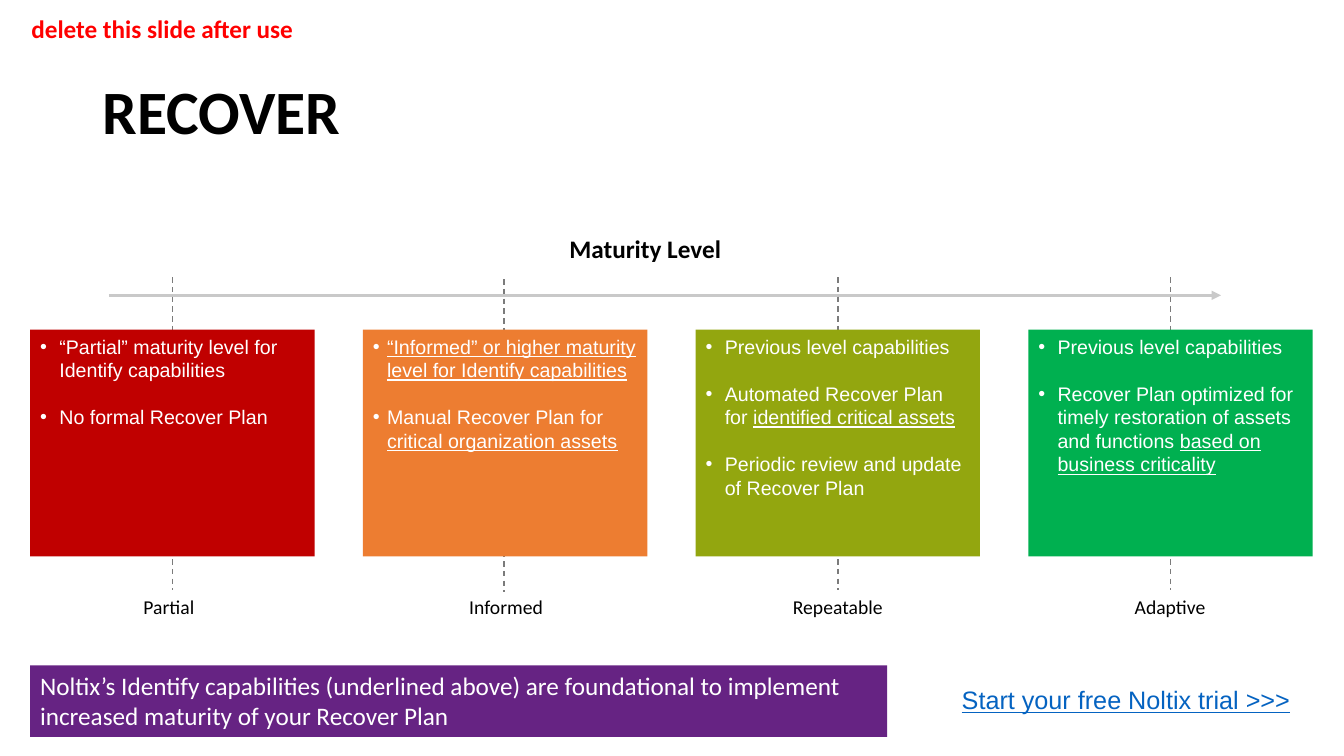
from lxml import etree
from pptx import Presentation
from pptx import util as u
from pptx.dml.color import RGBColor
from pptx.enum import dml, shapes, text
from pptx.oxml import ns

PX = 9144  # 100 px to the inch
CENTER = text.PP_ALIGN.CENTER
TOP, MIDDLE = text.MSO_ANCHOR.TOP, text.MSO_ANCHOR.MIDDLE


def px(*lengths):
    return [u.Emu(length * PX) for length in lengths]


def color(hex_string):
    return RGBColor.from_string(hex_string)


def set_all(target, values):
    for name, value in values.items():
        setattr(target, name, value)


def add_xml(parent, tag, **attributes):
    return etree.SubElement(parent, ns.qn(tag), attributes)


class SlideBuilder:
    body = {"name": "Arial", "size": u.Pt(14)}
    label = {"name": "Calibri", "size": u.Pt(14)}
    note = {"name": "Calibri", "size": u.Pt(18)}
    heading = {"name": "Calibri", "size": u.Pt(18), "bold": True}
    title = {"name": "Calibri", "size": u.Pt(44), "bold": True}
    link = {"name": "Arial", "size": u.Pt(18), "underline": True}

    def __init__(self, presentation):
        self.slide = presentation.slides.add_slide(presentation.slide_layouts[6])

    def add_runs(self, paragraph, runs, font, font_color):
        """Add (wording, underlined) runs to the paragraph."""
        for wording, underlined in runs:
            run = paragraph.add_run()
            run.text = wording
            set_all(run.font, font)
            run.font.color.rgb = color(font_color)
            if underlined:
                run.font.underline = True

    def text_box(self, box, wording, font, font_color="000000", wrap=True,
                 anchor=TOP, **paragraph_format):
        frame = self.slide.shapes.add_textbox(*px(*box)).text_frame
        set_all(frame, {"word_wrap": wrap, "vertical_anchor": anchor})
        paragraph = frame.paragraphs[0]
        set_all(paragraph, paragraph_format)
        self.add_runs(paragraph, [(wording, False)], font, font_color)

    def panel(self, box, fill, paragraphs, font, indent=0):
        """Draw a filled rectangle; a non-zero indent bullets its paragraphs."""
        shape = self.slide.shapes.add_shape(shapes.MSO_SHAPE.RECTANGLE, *px(*box))
        shape.shadow.inherit = False
        shape.fill.solid()
        shape.fill.fore_color.rgb = color(fill)
        shape.line.fill.background()
        frame = shape.text_frame
        set_all(frame, {"word_wrap": True, "vertical_anchor": TOP})
        for index, runs in enumerate(paragraphs):
            paragraph = frame.add_paragraph() if index else frame.paragraphs[0]
            paragraph.alignment = text.PP_ALIGN.LEFT
            if index:
                paragraph.space_before = u.Pt(16.8)
            if indent:
                self.bullet(paragraph, indent)
            self.add_runs(paragraph, runs, font, "FFFFFF")

    def bullet(self, paragraph, indent):
        properties = paragraph._p.get_or_add_pPr()
        properties.set("marL", str(indent * PX))
        properties.set("indent", str(-indent * PX))
        bullet_color = add_xml(properties, "a:buClr")
        add_xml(bullet_color, "a:srgbClr", val="FFFFFF")
        add_xml(properties, "a:buFont", typeface="Arial")
        add_xml(properties, "a:buChar", char="•")

    def line(self, ends, line_color, width, dashed=False, arrow=False):
        connector = self.slide.shapes.add_connector(
            shapes.MSO_CONNECTOR.STRAIGHT, *px(*ends))
        connector.line.color.rgb = color(line_color)
        connector.line.width = u.Pt(width)
        if dashed:
            connector.line.dash_style = dml.MSO_LINE.DASH
        if arrow:
            outline = connector._element.spPr.find(ns.qn("a:ln"))
            add_xml(outline, "a:tailEnd", type="triangle")
        add_xml(connector._element.spPr, "a:effectLst")


# name, label left and width, marker x and top, fill, bullet indent, bullets
LEVELS = [
    ("Partial", 132, 71, 171, 275, "C00000", 19, [
        [("“Partial” maturity level for Identify capabilities", False)],
        [("No formal Recover Plan", False)]]),
    ("Informed", 455, 94, 500, 277, "ED7D31", 14, [
        [("“Informed” or higher maturity level for Identify capabilities", True)],
        [("Manual Recover Plan for ", False),
         ("critical organization assets", True)]]),
    ("Repeatable", 776, 110, 831, 275, "93A60F", 19, [
        [("Previous level capabilities", False)],
        [("Automated Recover Plan for ", False),
         ("identified critical assets", True)],
        [("Periodic review and update of Recover Plan", False)]]),
    ("Adaptive", 1115, 91, 1161, 275, "00B050", 19, [
        [("Previous level capabilities", False)],
        [("Recover Plan optimized for timely restoration of assets and functions ",
          False),
         ("based on business criticality", True)]]),
]
PANEL_LEFT, PANEL_STEP = 30, 330
MARKER_HEIGHT = 310


def main():
    presentation = Presentation()
    set_all(presentation, {"slide_width": px(1333)[0], "slide_height": px(750)[0]})
    builder = SlideBuilder(presentation)

    builder.text_box((92, 41, 1150, 145), "RECOVER", builder.title,
                     anchor=MIDDLE, line_spacing=0.9)
    builder.text_box((-56, 7, 434, 43), "delete this slide after use",
                     builder.heading, "FF0000", anchor=MIDDLE, alignment=CENTER)
    builder.text_box((944, 674, 355, 40), "Start your free Noltix trial >>>",
                     builder.link, "0563C1")
    builder.text_box((341, 227, 598, 40), "Maturity Level", builder.heading,
                     alignment=CENTER)
    builder.line((108, 293, 1211, 293), "C9C9C9", 2.25, arrow=True)

    for index, level in enumerate(LEVELS):
        name, left, width, marker, top, fill, indent, bullets = level
        builder.text_box((left, 585, width, 34), name, builder.label,
                         wrap=False, alignment=CENTER)
        builder.line((marker, top, marker, top + MARKER_HEIGHT), "7B7B7B", 1,
                     dashed=True)
        builder.panel((PANEL_LEFT + index * PANEL_STEP, 327, 282, 225), fill,
                      bullets, builder.body, indent)

    builder.panel((30, 660, 850, 71), "662383", [[(
        "Noltix’s Identify capabilities (underlined above) are foundational to "
        "implement increased maturity of your Recover Plan", False)]], builder.note)
    presentation.save("out.pptx")


if __name__ == "__main__":
    main()
